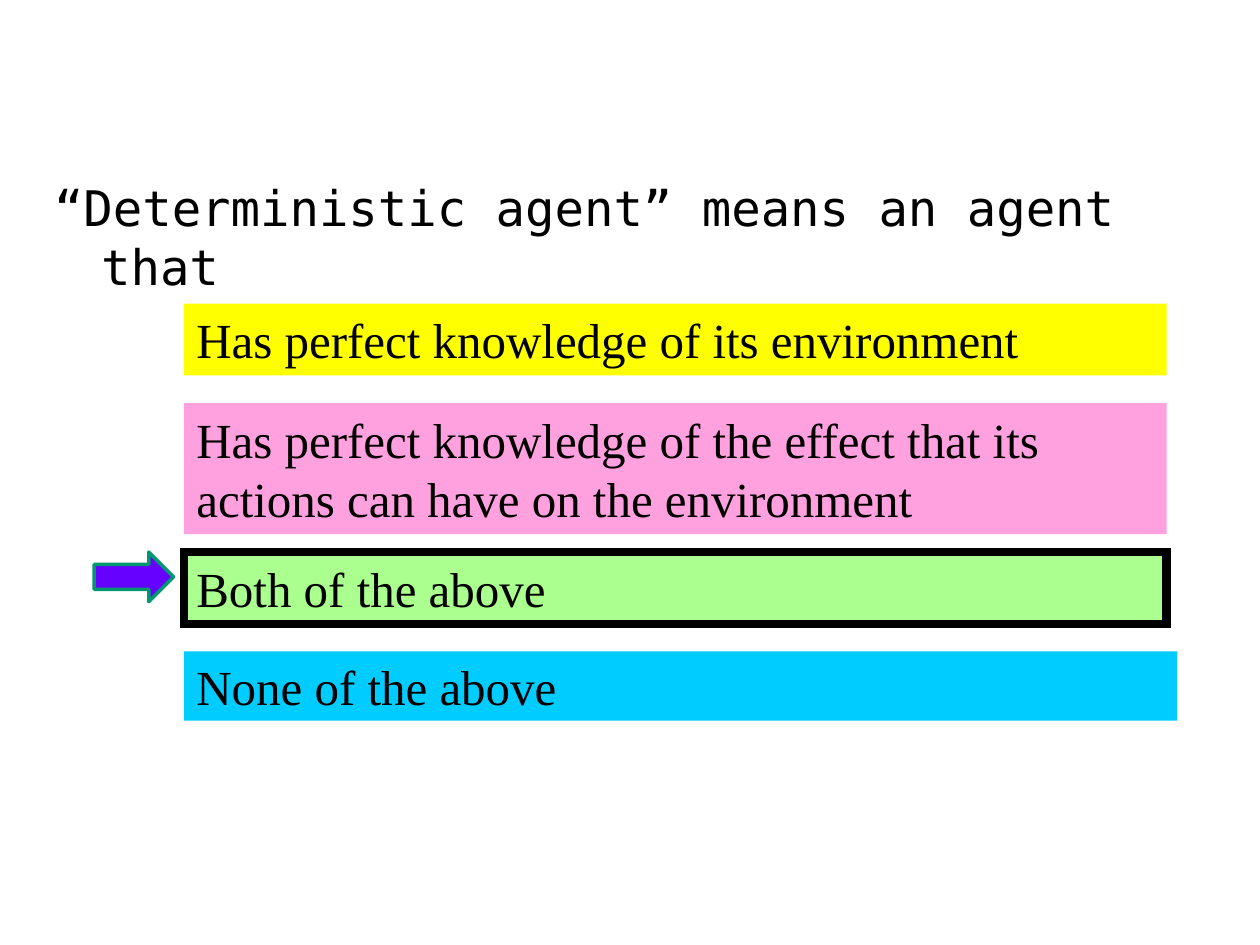
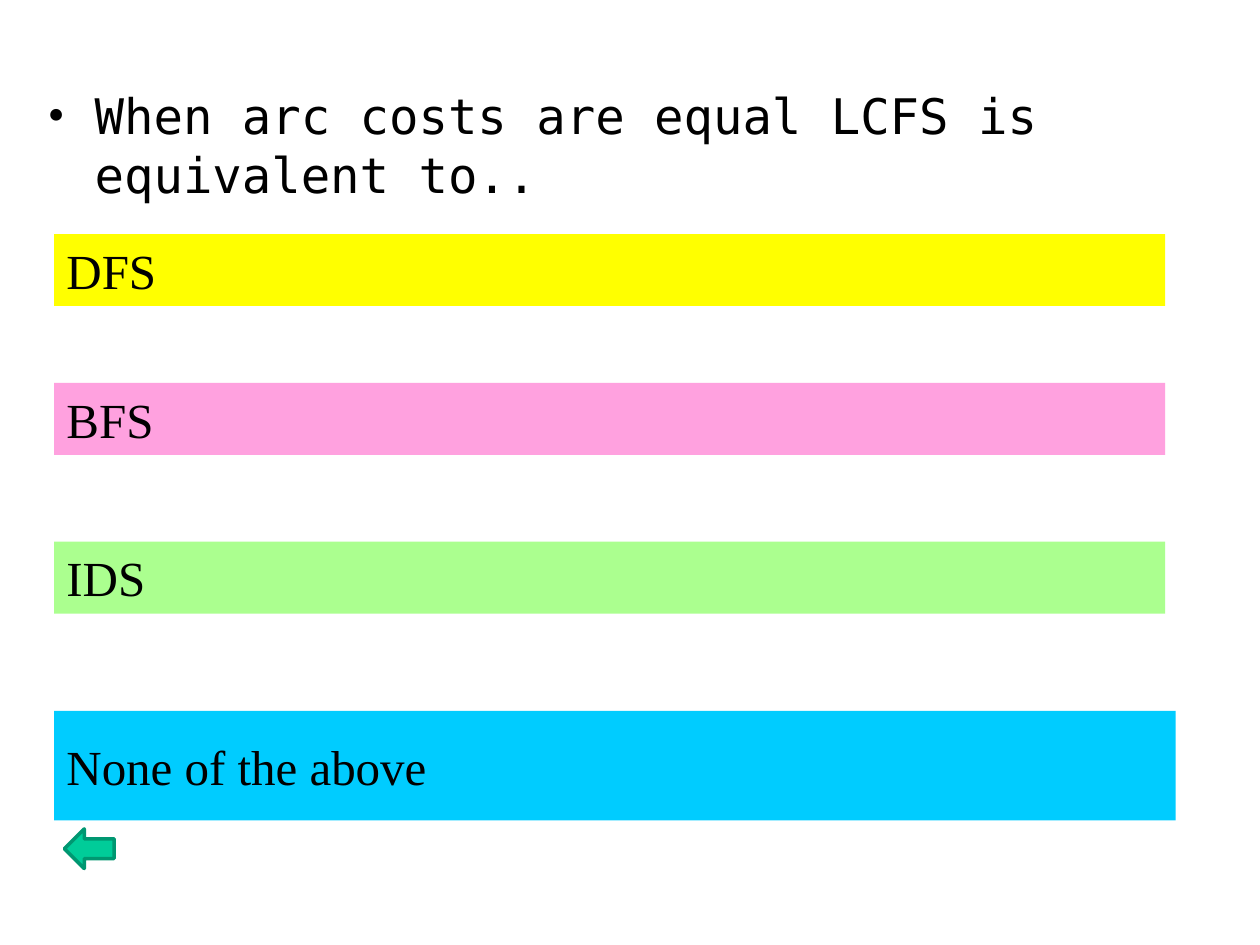
from lxml import etree
from pptx import Presentation
from pptx.dml.color import RGBColor
from pptx.enum.shapes import MSO_SHAPE as Preset
from pptx.enum.text import MSO_ANCHOR as Anchor, PP_ALIGN as Align
from pptx.oxml.ns import qn
from pptx.util import Cm, Pt

# Shared style
BLACK = "000000"
ARROW_EDGE = "009771"
QUESTION_FONT, ANSWER_FONT = "DejaVu Sans Mono", "Times New Roman"
HANGING = Cm(0.95)
# Fill and opacity in percent for answers one to four
ANSWER_FILLS = [("FFFF00", 100), ("FF66CC", 61), ("66FF33", 55), ("00CCFF", 100)]
LAST_EXTRA_WIDTH = 0.21


def color(hex_string):
    return RGBColor.from_string(hex_string)


def write(frame, text, font_name):
    frame.word_wrap = True
    paragraph = frame.paragraphs[0]
    paragraph.alignment = Align.LEFT
    run = paragraph.add_run()
    run.text = text
    run.font.name = font_name
    run.font.size = Pt(28)
    run.font.color.rgb = color(BLACK)
    return paragraph


# Each answer: text, top, height; lengths in cm
quizzes = [
    {
        "question": "“Deterministic agent” means an agent that",
        "question_at": (0.84, 3.46),
        "bulleted": False,
        "left": 3.71,
        "width": 19.81,
        "answers": [
            ("Has perfect knowledge of its environment", 6.12, 1.45),
            ("Has perfect knowledge of the effect that its actions "
             "can have on the environment", 8.13, 2.64),
            ("Both of the above", 11.13, 1.45),
            ("None of the above", 13.13, 1.4),
        ],
        "outlined": 2,
        "arrow": (Preset.RIGHT_ARROW, (1.9, 11.13, 1.6, 1.0), "6600FF"),
    },
    {
        "question": "When arc costs are equal LCFS is equivalent to..",
        "question_at": (0.71, 1.6),
        "bulleted": True,
        "left": 1.09,
        "width": 22.4,
        "answers": [
            ("DFS", 4.72, 1.45),
            ("BFS", 7.72, 1.45),
            ("IDS", 10.92, 1.45),
            ("None of the above", 14.33, 2.21),
        ],
        "outlined": None,
        "arrow": (Preset.LEFT_ARROW, (1.3, 16.71, 1.0, 0.8), "00CC99"),
    },
]

deck = Presentation()
deck.slide_width, deck.slide_height = Cm(25.4), Cm(19.05)

for quiz in quizzes:
    slide = deck.slides.add_slide(deck.slide_layouts[6])

    # Question with a hanging indent
    left, top = quiz["question_at"]
    question = slide.shapes.add_textbox(Cm(left), Cm(top), Cm(23.5), Cm(12.5))
    paragraph = write(question.text_frame, quiz["question"], QUESTION_FONT)
    indent = paragraph._p.get_or_add_pPr()
    indent.set("marL", str(HANGING))
    indent.set("indent", str(-HANGING))
    if quiz["bulleted"]:
        etree.SubElement(indent, qn("a:buFont"), typeface=ANSWER_FONT)
        etree.SubElement(indent, qn("a:buChar"), char="•")

    # Answer bars
    for index, (text, top, height) in enumerate(quiz["answers"]):
        is_last = index == len(quiz["answers"]) - 1
        width = quiz["width"] + (LAST_EXTRA_WIDTH if is_last else 0)
        answer = slide.shapes.add_shape(
            Preset.RECTANGLE, Cm(quiz["left"]), Cm(top), Cm(width), Cm(height))
        answer.shadow.inherit = False
        fill, opacity = ANSWER_FILLS[index]
        answer.fill.solid()
        answer.fill.fore_color.rgb = color(fill)
        if opacity < 100:
            tint = answer._element.spPr.find(qn("a:solidFill"))[0]
            etree.SubElement(tint, qn("a:alpha"), val=str(opacity * 1000))
        if index == quiz["outlined"]:
            answer.line.color.rgb = color(BLACK)
            answer.line.width = Pt(4.75)
            outline = answer._element.spPr.find(qn("a:ln"))
            etree.SubElement(outline, qn("a:miter"), lim="800000")
        else:
            answer.line.fill.background()
        answer.text_frame.vertical_anchor = Anchor.MIDDLE if is_last else Anchor.TOP
        write(answer.text_frame, text, ANSWER_FONT)

    # Arrow
    preset, place, fill = quiz["arrow"]
    arrow = slide.shapes.add_shape(preset, *[Cm(length) for length in place])
    arrow.shadow.inherit = False
    arrow.fill.solid()
    arrow.fill.fore_color.rgb = color(fill)
    arrow.line.color.rgb = color(ARROW_EDGE)
    arrow.line.width = Pt(2)

deck.save("out.pptx")
